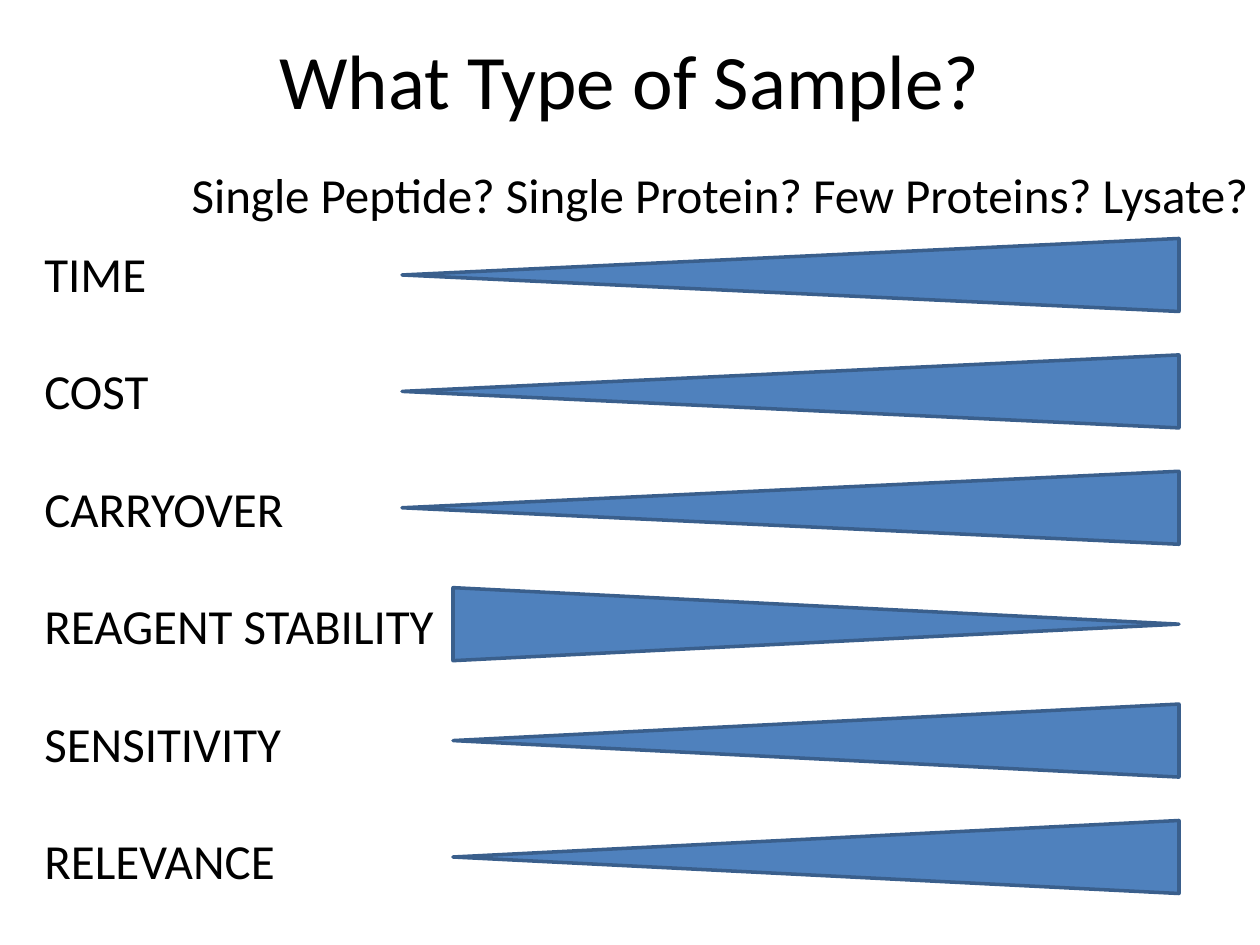
from lxml import etree
from pptx import Presentation
from pptx.dml.color import RGBColor
from pptx.enum.shapes import MSO_SHAPE
from pptx.enum.text import MSO_ANCHOR, PP_ALIGN
from pptx.oxml.ns import qn
from pptx.util import Emu, Pt

TRIANGLE = MSO_SHAPE.ISOSCELES_TRIANGLE
MIDDLE, TOP = MSO_ANCHOR.MIDDLE, MSO_ANCHOR.TOP
CENTER, LEFT = PP_ALIGN.CENTER, PP_ALIGN.LEFT
COLORS = {"text": "000000", "wedge": "4F81BD", "outline": "3A5F8C"}
PX_PER_INCH = 126
FONT = "Calibri"


def px(length):
    return Emu(round(length * 914400 / PX_PER_INCH))


def format_text(frame, size, align, anchor):
    frame.vertical_anchor = anchor
    for paragraph in frame.paragraphs:
        paragraph.alignment = align
        for run in paragraph.runs:
            run.font.name = FONT
            run.font.size = Pt(size)
            run.font.color.rgb = RGBColor.from_string(COLORS["text"])


prs = Presentation()
prs.slide_width, prs.slide_height = px(1260), px(945)
slide = prs.slides.add_slide(prs.slide_layouts[1])

title, sample_types = slide.placeholders
title.left, title.top, title.width, title.height = px(63), px(0), px(1134), px(158)
title.text_frame.text = "What Type of Sample?"
format_text(title.text_frame, 44, CENTER, MIDDLE)

sample_types.left, sample_types.top = px(179), px(158)
sample_types.width, sample_types.height = px(1134), px(624)
sample_types.text_frame.text = "Single Peptide? Single Protein? Few Proteins? Lysate?"
format_text(sample_types.text_frame, 28, LEFT, TOP)
properties = sample_types.text_frame.paragraphs[0]._p.get_or_add_pPr()
properties.set("marL", "0")
properties.set("indent", "0")
etree.SubElement(properties, qn("a:buNone"))

# Factor, wedge length, rotation: 270 grows to the right, 90 shrinks
FACTORS = [
    ("TIME", 777, 270),
    ("COST", 777, 270),
    ("CARRYOVER", 777, 270),
    ("REAGENT STABILITY", 726, 90),
    ("SENSITIVITY", 726, 270),
    ("RELEVANCE", 726, 270),
]

factor_list = slide.shapes.add_textbox(px(32), px(237), px(418), px(665))
factor_list.text_frame.word_wrap = False
factor_list.text_frame.text = "\n".join(name for name, _, _ in FACTORS)
format_text(factor_list.text_frame, 28, LEFT, TOP)
for paragraph in factor_list.text_frame.paragraphs[1:]:
    paragraph.space_before = Pt(33.5)

WEDGE_RIGHT, WEDGE_HEIGHT = 1179, 73
FIRST_CENTER, LAST_CENTER = 275, 857
row_pitch = (LAST_CENTER - FIRST_CENTER) / (len(FACTORS) - 1)

for row, (_, length, rotation) in enumerate(FACTORS):
    center_x = WEDGE_RIGHT - length / 2
    center_y = FIRST_CENTER + row * row_pitch
    wedge = slide.shapes.add_shape(
        TRIANGLE,
        px(center_x - WEDGE_HEIGHT / 2), px(center_y - length / 2),
        px(WEDGE_HEIGHT), px(length),
    )
    wedge.rotation = rotation
    wedge.shadow.inherit = False
    wedge.fill.solid()
    wedge.fill.fore_color.rgb = RGBColor.from_string(COLORS["wedge"])
    wedge.line.color.rgb = RGBColor.from_string(COLORS["outline"])
    wedge.line.width = Pt(2)

prs.save("out.pptx")
